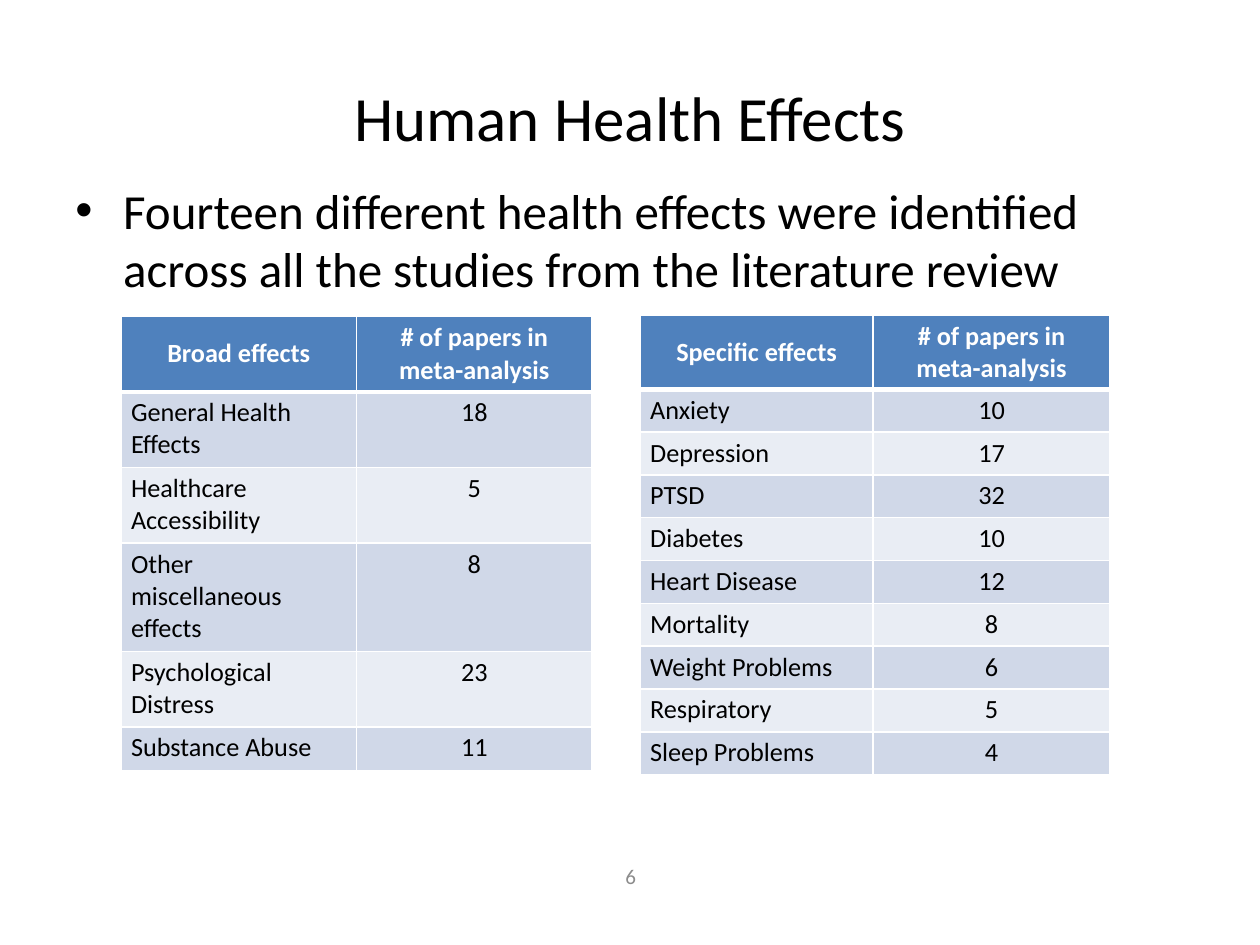
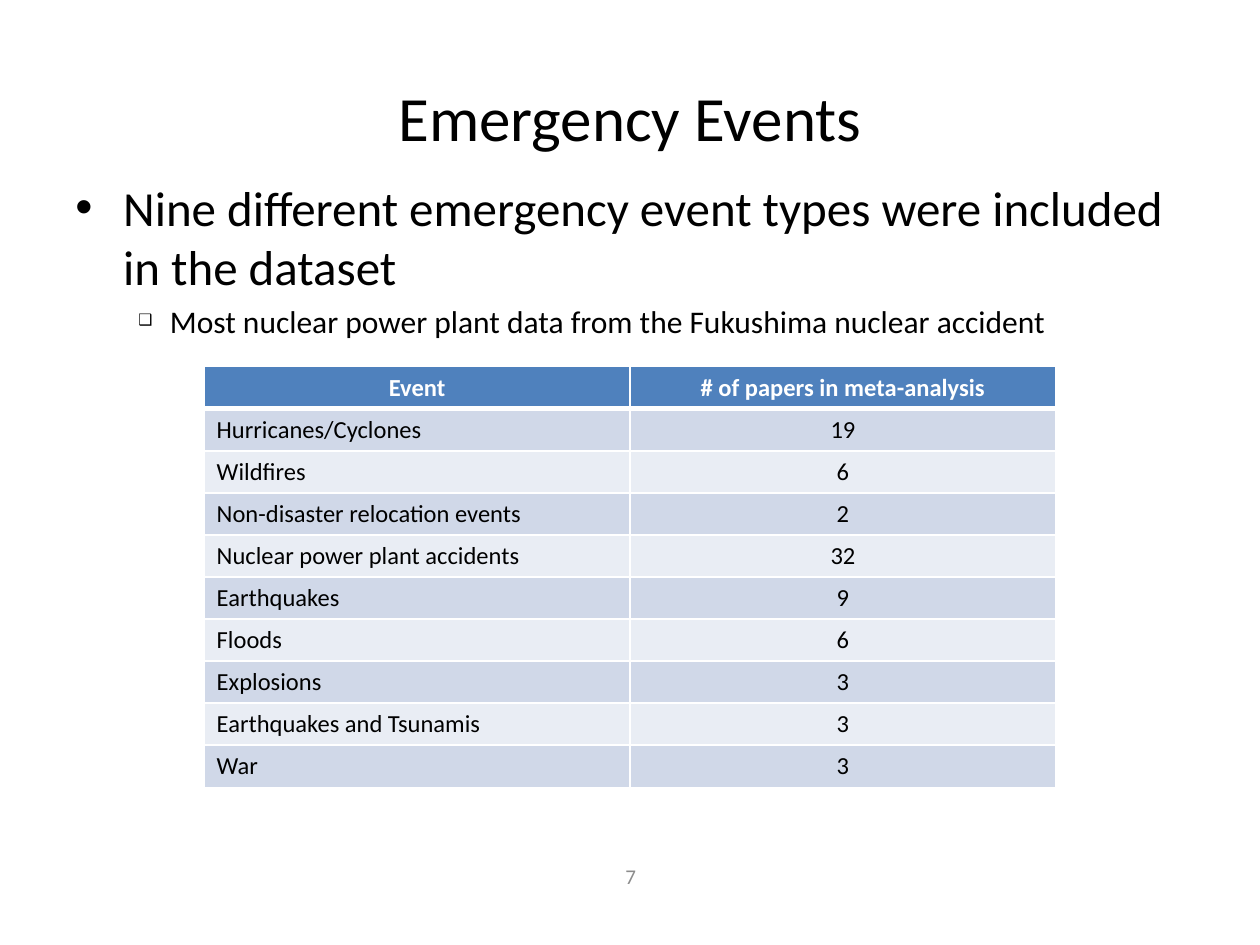
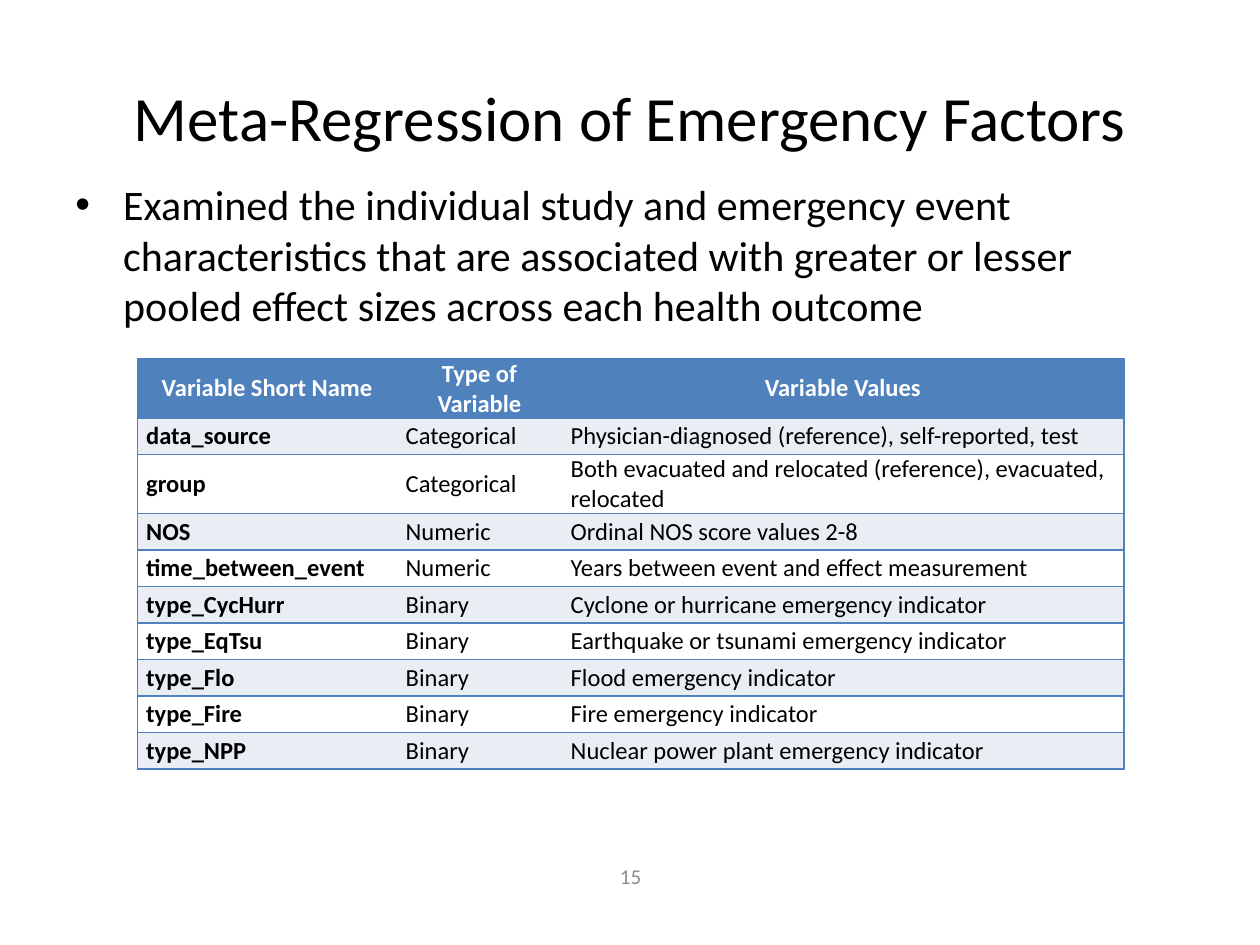
from lxml.etree import SubElement
from pptx import Presentation
from pptx.dml.color import RGBColor
from pptx.enum.text import MSO_ANCHOR, PP_ALIGN
from pptx.oxml.ns import qn
from pptx.util import Inches, Pt

FONT = "Calibri"
BLACK = RGBColor(0x00, 0x00, 0x00)
WHITE = RGBColor(0xFF, 0xFF, 0xFF)
GRAY = RGBColor(0x8C, 0x8C, 0x8C)
BLUE = RGBColor(0x4F, 0x81, 0xBD)
DARK_BAND = RGBColor(0xD0, 0xD8, 0xE8)
LIGHT_BAND = RGBColor(0xE9, 0xED, 0xF4)

PAPERS = "# of papers in meta-analysis"
WHITE_GRID = {"bands": (DARK_BAND, LIGHT_BAND), "line": WHITE, "header_line": 3}
COMPACT_GRID = {**WHITE_GRID, "size": 15, "margins": (0.08, 0.04)}
BLUE_RULES = {"bands": (LIGHT_BAND, WHITE), "line": BLUE, "inner_verticals": False,
              "margins": (0.07, 0), "bold_names": True, "center_values": False,
              "body_anchor": MSO_ANCHOR.MIDDLE}

SLIDES = [
    {
        "title": "Human Health Effects",
        "number": "6",
        "body_top": 1.38,
        "bullets": [("Fourteen different health effects were identified across all "
                     "the studies from the literature review", 28, 0)],
        "tables": [
            {"left": 0.96, "top": 2.51, "columns": [1.87, 1.87],
             "heights": [0.6, 0.6, 0.6, 0.86, 0.6, 0.35],
             "rows": [("Broad effects", PAPERS),
                      ("General Health Effects", "18"),
                      ("Healthcare Accessibility", "5"),
                      ("Other miscellaneous effects", "8"),
                      ("Psychological Distress", "23"),
                      ("Substance Abuse", "11")],
             **COMPACT_GRID},
            {"left": 5.08, "top": 2.5, "columns": [1.85, 1.88],
             "heights": [0.59] + [0.34] * 9,
             "rows": [("Specific effects", PAPERS),
                      ("Anxiety", "10"),
                      ("Depression", "17"),
                      ("PTSD", "32"),
                      ("Diabetes", "10"),
                      ("Heart Disease", "12"),
                      ("Mortality", "8"),
                      ("Weight Problems", "6"),
                      ("Respiratory", "5"),
                      ("Sleep Problems", "4")],
             **COMPACT_GRID},
        ],
    },
    {
        "title": "Emergency Events",
        "number": "7",
        "body_top": 1.36,
        "bullets": [("Nine different emergency event types were included in the dataset", 28, 0),
                    ("Most nuclear power plant data from the Fukushima nuclear accident", 18, 1)],
        "tables": [
            {"left": 1.62, "top": 2.91, "columns": [3.38, 3.38],
             "heights": [0.33] * 10,
             "rows": [("Event", PAPERS),
                      ("Hurricanes/Cyclones", "19"),
                      ("Wildfires", "6"),
                      ("Non-disaster relocation events", "2"),
                      ("Nuclear power plant accidents", "32"),
                      ("Earthquakes", "9"),
                      ("Floods", "6"),
                      ("Explosions", "3"),
                      ("Earthquakes and Tsunamis", "3"),
                      ("War", "3")],
             **WHITE_GRID},
        ],
    },
    {
        "title": "Meta-Regression of Emergency Factors",
        "number": "15",
        "body_top": 1.37,
        "bullets": [("Examined the individual study and emergency event characteristics "
                     "that are associated with greater or lesser pooled effect sizes "
                     "across each health outcome", 24, 0)],
        "tables": [
            {"left": 1.09, "top": 2.85, "columns": [2.06, 1.31, 4.46],
             "heights": [0.39] + [0.29] * 9,
             "rows": [("Variable Short Name", "Type of Variable", "Variable Values"),
                      ("data_source", "Categorical",
                       "Physician-diagnosed (reference), self-reported, test"),
                      ("group", "Categorical",
                       "Both evacuated and relocated (reference), evacuated, relocated"),
                      ("NOS", "Numeric", "Ordinal NOS score values 2-8"),
                      ("time_between_event", "Numeric",
                       "Years between event and effect measurement"),
                      ("type_CycHurr", "Binary", "Cyclone or hurricane emergency indicator"),
                      ("type_EqTsu", "Binary", "Earthquake or tsunami emergency indicator"),
                      ("type_Flo", "Binary", "Flood emergency indicator"),
                      ("type_Fire", "Binary", "Fire emergency indicator"),
                      ("type_NPP", "Binary", "Nuclear power plant emergency indicator")],
             **BLUE_RULES},
        ],
    },
]


def write(para, text, size, color=BLACK, bold=False, align=PP_ALIGN.LEFT, level=None):
    """Write one formatted paragraph; a level of 0 or 1 gives it a bullet."""
    para.alignment = align
    if level is not None:
        indent, hanging, sign, percent = [(0.38, 0.38, "•", 100), (0.75, 0.25, "❑", 50)][level]
        para.level = level
        para.space_before = Pt(0.2 * size if level else 0)
        properties = para._p.get_or_add_pPr()
        properties.set("marL", str(Inches(indent)))
        properties.set("indent", str(-Inches(hanging)))
        SubElement(properties, qn("a:buSzPct"), val=str(percent * 1000))
        SubElement(properties, qn("a:buFont"), typeface="Arial")
        SubElement(properties, qn("a:buChar"), char=sign)
    span = para.add_run()
    span.text = text
    span.font.name = FONT
    span.font.size = Pt(size)
    span.font.bold = bold
    span.font.color.rgb = color


def draw_table(page, left, top, columns, heights, rows, bands, line, size=14,
               margins=(0.1, 0.05), header_line=1, inner_verticals=True,
               bold_names=False, center_values=True, body_anchor=MSO_ANCHOR.TOP):
    table = page.shapes.add_table(len(rows), len(columns), Inches(left), Inches(top),
                                  Inches(sum(columns)), Inches(sum(heights))).table
    for column, width in zip(table.columns, columns):
        column.width = Inches(width)
    for row_index, row in enumerate(rows):
        table.rows[row_index].height = Inches(heights[row_index])
        header = row_index == 0
        for column_index, text in enumerate(row):
            cell = table.cell(row_index, column_index)
            cell.margin_left = cell.margin_right = Inches(margins[0])
            cell.margin_top = cell.margin_bottom = Inches(margins[1])
            cell.vertical_anchor = MSO_ANCHOR.MIDDLE if header else body_anchor
            edges = {
                "a:lnL": 1 if inner_verticals or column_index == 0 else 0,
                "a:lnR": 1 if inner_verticals or column_index == len(row) - 1 else 0,
                "a:lnT": header_line if row_index == 1 else 1,
                "a:lnB": header_line if header else 1,
            }
            for tag, width in edges.items():
                border = SubElement(cell._tc.get_or_add_tcPr(), qn(tag), w=str(Pt(width)))
                if width:
                    paint = SubElement(border, qn("a:solidFill"))
                    SubElement(paint, qn("a:srgbClr"), val=str(line))
                else:
                    SubElement(border, qn("a:noFill"))
            cell.fill.solid()
            cell.fill.fore_color.rgb = BLUE if header else bands[(row_index - 1) % 2]
            centered = header or (center_values and column_index > 0)
            write(cell.text_frame.paragraphs[0], text, size,
                  color=WHITE if header else BLACK,
                  bold=header or (bold_names and column_index == 0),
                  align=PP_ALIGN.CENTER if centered else PP_ALIGN.LEFT)


deck = Presentation()
deck.slide_width = Inches(10)
deck.slide_height = Inches(7.5)

for content in SLIDES:
    page = deck.slides.add_slide(deck.slide_layouts[5])

    title = page.shapes.title
    title.left, title.top, title.width, title.height = map(Inches, (0.5, 0.3, 9, 1.25))
    title.text_frame.vertical_anchor = MSO_ANCHOR.MIDDLE
    write(title.text_frame.paragraphs[0], content["title"], 36, align=PP_ALIGN.CENTER)

    body = page.shapes.add_textbox(Inches(0.5), Inches(content["body_top"]),
                                   Inches(9), Inches(4.95)).text_frame
    body.word_wrap = True
    for index, (text, size, level) in enumerate(content["bullets"]):
        para = body.add_paragraph() if index else body.paragraphs[0]
        write(para, text, size, level=level)

    footer = page.shapes.add_textbox(Inches(3.42), Inches(6.75),
                                     Inches(3.17), Inches(0.4)).text_frame
    footer.word_wrap = True
    footer.vertical_anchor = MSO_ANCHOR.MIDDLE
    write(footer.paragraphs[0], content["number"], 12, color=GRAY, align=PP_ALIGN.CENTER)

    for table in content["tables"]:
        draw_table(page, **table)

deck.save("out.pptx")
